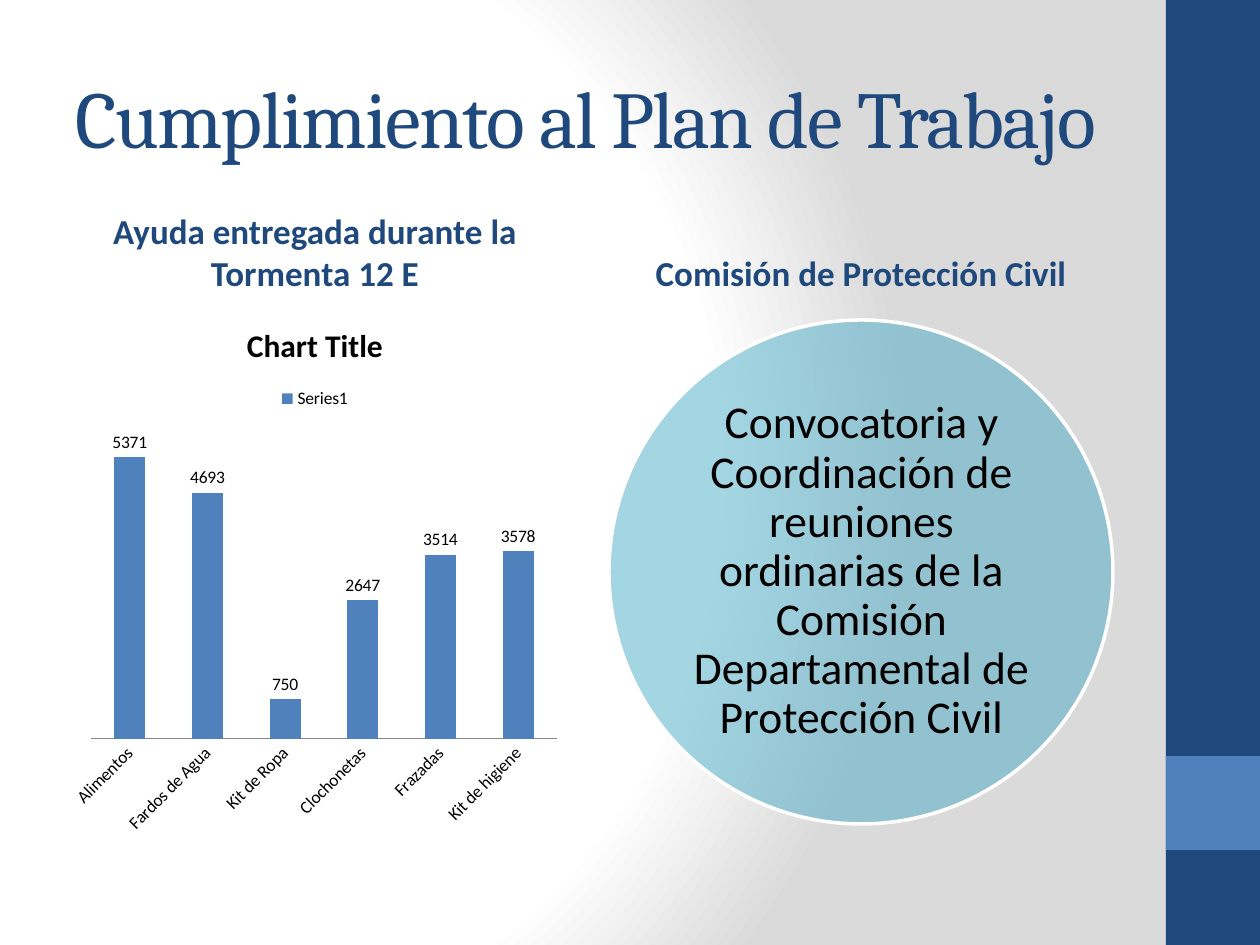
from typing import NamedTuple

from lxml.etree import SubElement
from pptx import Presentation
from pptx.chart.data import CategoryChartData
from pptx.dml.color import RGBColor
from pptx.enum.chart import XL_CHART_TYPE as CT, XL_LABEL_POSITION as LP
from pptx.enum.chart import XL_LEGEND_POSITION as LEG, XL_TICK_MARK as TM
from pptx.enum.shapes import MSO_SHAPE as SHP
from pptx.enum.text import MSO_ANCHOR as ANC, PP_ALIGN as AL
from pptx.oxml.ns import qn
from pptx.util import Emu, Pt

COLORS = {
    "navy": "1F497D", "blue": "4F81BD", "aqua": "4BACC6", "white": "FFFFFF",
    "silver": "DADADA", "gray": "868686", "black": "000000",
}
STOPS = ((0, "white"), (75, "white"), (100, "silver"))
FOCUS = {"l": 20, "t": 50, "r": 100, "b": 50}
AID = {
    "Alimentos": 5371, "Fardos de Agua": 4693, "Kit de Ropa": 750,
    "Clochonetas": 2647, "Frazadas": 3514, "Kit de higiene": 3578,
}


class Box(NamedTuple):
    x: int
    y: int
    w: int
    h: int


class Band(NamedTuple):
    box: Box
    color: str


class Label(NamedTuple):
    box: Box
    text: str
    size: int
    color: str
    bold: bool
    anchor: ANC
    inset: int
    spacing: float


BANDS = [
    Band(Box(1166, 0, 94, 945), "navy"),
    Band(Box(1166, 756, 94, 94), "blue"),
]
LABELS = [
    Label(Box(63, 212, 504, 88), "Ayuda entregada durante la Tormenta 12 E",
          20, "navy", True, ANC.BOTTOM, 6, 1),
    Label(Box(609, 212, 504, 88), "Comisión de Protección Civil",
          20, "navy", True, ANC.BOTTOM, 6, 1),
    Label(Box(683, 393, 357, 357),
          "Convocatoria y Coordinación de reuniones ordinarias de la "
          "Comisión Departamental de Protección Civil",
          26, "black", False, ANC.MIDDLE, 0, 0.9),
]


def px(n: int) -> Emu:
    return Emu(round(n * 914400 / 126))


def rgb(name: str) -> RGBColor:
    return RGBColor.from_string(COLORS[name])


def place(box: Box) -> tuple:
    return tuple(px(n) for n in box)


def style(font, size: int, color: str, bold: bool = False, name: str = "Calibri") -> None:
    font.size, font.bold, font.name = Pt(size), bold, name
    font.color.rgb = rgb(color)


def paint_background(s) -> None:
    fill = s.background.fill
    fill.gradient()
    grad = s.background._cSld.bg.bgPr.find(qn("a:gradFill"))
    for child in list(grad):
        grad.remove(child)
    stops = SubElement(grad, qn("a:gsLst"))
    for pos, color in STOPS:
        gs = SubElement(stops, qn("a:gs"), pos=str(pos * 1000))
        SubElement(gs, qn("a:srgbClr"), val=COLORS[color])
    radial = SubElement(grad, qn("a:path"), {"path": "circle"})
    SubElement(radial, qn("a:fillToRect"),
               {side: str(n * 1000) for side, n in FOCUS.items()})


def add_filled(s, kind: SHP, box: Box, color: str):
    sp = s.shapes.add_shape(kind, *place(box))
    sp.shadow.inherit = False
    sp.fill.solid()
    sp.fill.fore_color.rgb = rgb(color)
    sp.line.fill.background()
    return sp


def add_circle(s, box: Box) -> None:
    sp = add_filled(s, SHP.OVAL, box, "aqua")
    clr = sp.fill._xPr.find(qn("a:solidFill")).find(qn("a:srgbClr"))
    SubElement(clr, qn("a:alpha"), val="50000")
    sp.line.color.rgb = rgb("white")
    sp.line.width = Pt(2)


def add_label(s, label: Label) -> None:
    tf = s.shapes.add_textbox(*place(label.box)).text_frame
    tf.word_wrap = True
    tf.vertical_anchor = label.anchor
    tf.margin_left = tf.margin_right = px(label.inset * 2)
    tf.margin_top = tf.margin_bottom = px(label.inset)
    p = tf.paragraphs[0]
    p.alignment = AL.CENTER
    p.line_spacing = label.spacing
    r = p.add_run()
    r.text = label.text
    style(r.font, label.size, label.color, label.bold)


def set_title(s, box: Box, text: str) -> None:
    sp = s.shapes.title
    sp.left, sp.top, sp.width, sp.height = place(box)
    tf = sp.text_frame
    tf.word_wrap = True
    tf.vertical_anchor = ANC.MIDDLE
    p = tf.paragraphs[0]
    p.alignment = AL.LEFT
    r = p.add_run()
    r.text = text
    style(r.font, 46, "navy", name="Cambria")
    r.font._element.set("spc", "-100")


def add_aid_chart(s, box: Box) -> None:
    data = CategoryChartData()
    data.categories = list(AID)
    data.add_series("Series1", AID.values())
    chart = s.shapes.add_chart(CT.COLUMN_CLUSTERED, *place(box), data).chart
    style(chart.font, 10, "black")
    chart.has_title = True
    r = chart.chart_title.text_frame.paragraphs[0].add_run()
    r.text = "Chart Title"
    style(r.font, 18, "black", True)
    chart.has_legend = True
    chart.legend.position = LEG.TOP
    chart.legend.include_in_layout = False
    chart.value_axis.visible = False
    chart.value_axis.has_major_gridlines = False
    axis = chart.category_axis
    axis.major_tick_mark = axis.minor_tick_mark = TM.NONE
    axis.format.line.color.rgb = rgb("gray")
    plot = chart.plots[0]
    plot.gap_width, plot.overlap = 150, -25
    plot.vary_by_categories = False
    plot.has_data_labels = True
    plot.data_labels.show_value = True
    plot.data_labels.position = LP.OUTSIDE_END
    fill = plot.series[0].format.fill
    fill.solid()
    fill.fore_color.rgb = rgb("blue")


def main() -> None:
    prs = Presentation()
    prs.slide_width, prs.slide_height = px(1260), px(945)
    s = prs.slides.add_slide(prs.slide_layouts[5])
    paint_background(s)
    for band in BANDS:
        add_filled(s, SHP.RECTANGLE, band.box, band.color)
    set_title(s, Box(63, 38, 1050, 157), "Cumplimiento al Plan de Trabajo")
    add_circle(s, Box(609, 320, 504, 504))
    for label in LABELS:
        add_label(s, label)
    add_aid_chart(s, Box(63, 300, 504, 544))
    prs.save("out.pptx")


if __name__ == "__main__":
    main()
